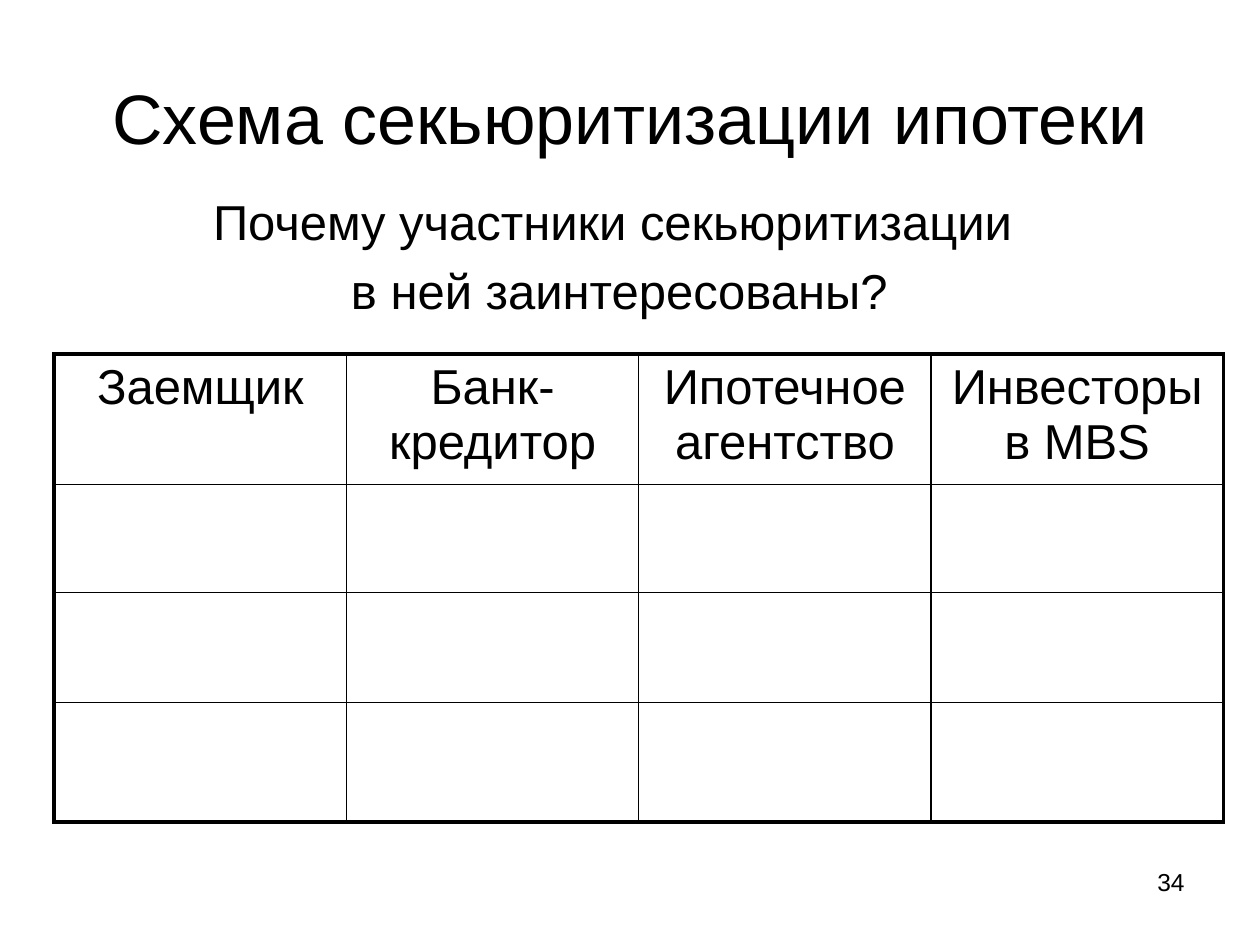
from lxml.etree import SubElement
from pptx import Presentation
from pptx.dml.color import RGBColor
from pptx.enum.text import MSO_ANCHOR as Anchor, PP_ALIGN as Align
from pptx.oxml import parse_xml
from pptx.oxml.ns import nsdecls, qn
from pptx.util import Inches, Pt

BLACK = RGBColor(0, 0, 0)
WHITE = RGBColor(255, 255, 255)
OUTER, INNER = Pt(2.25), Pt(1)
HEADERS = ["Заемщик", "Банк-кредитор", "Ипотечное агентство", "Инвесторы в MBS"]
ROW_HEIGHTS = [1.03, 0.86, 0.87, 0.95]
COLUMN_WIDTH = 2.32


def write(paragraph, text, size, align=Align.CENTER, before=0):
    paragraph.alignment = align
    paragraph.space_before = Pt(before)
    run = paragraph.add_run()
    run.text = text
    run.font.name = "Arial"
    run.font.size = Pt(size)
    run.font.color.rgb = BLACK


def add_box(left, top, width, height, anchor=Anchor.TOP):
    """Add a wrapping text box and return its text frame."""
    box = slide.shapes.add_textbox(*map(Inches, (left, top, width, height)))
    box.text_frame.word_wrap = True
    box.text_frame.vertical_anchor = anchor
    return box.text_frame


presentation = Presentation()
presentation.slide_width, presentation.slide_height = Inches(10), Inches(7.5)
slide = presentation.slides.add_slide(presentation.slide_layouts[6])
slide.background.fill.solid()
slide.background.fill.fore_color.rgb = WHITE

# Page number, title and question
write(add_box(7.17, 6.83, 2.33, 0.52).paragraphs[0], "34", 14, Align.RIGHT)
title = add_box(0.5, 0.3, 9, 1.25, Anchor.MIDDLE)
write(title.paragraphs[0], "Схема секьюритизации ипотеки", 40)

question = add_box(0.5, 1.47, 8.83, 1.1)
lines = ["Почему участники секьюритизации ", "в ней заинтересованы?"]
for paragraph, line in zip([question.paragraphs[0], question.add_paragraph()], lines):
    write(paragraph, line, 28, before=5.6)
    properties = paragraph._p.get_or_add_pPr()
    properties.set("marL", str(Inches(0.38)))
    properties.set("indent", str(-Inches(0.38)))

# Table of participants
row_count, column_count = len(ROW_HEIGHTS), len(HEADERS)
table = slide.shapes.add_table(
    row_count, column_count, Inches(0.43), Inches(2.81),
    Inches(COLUMN_WIDTH * column_count), Inches(sum(ROW_HEIGHTS))).table
table.first_row = table.horz_banding = False
for column in table.columns:
    column.width = Inches(COLUMN_WIDTH)
for row, height in zip(table.rows, ROW_HEIGHTS):
    row.height = Inches(height)
for column, header in enumerate(HEADERS):
    write(table.cell(0, column).text_frame.paragraphs[0], header, 28, before=5.6)

for row in range(row_count):
    for column in range(column_count):
        cell = table.cell(row, column)
        cell.fill.background()
        on_edge = {"lnL": column == 0, "lnR": column == column_count - 1,
                   "lnT": row == 0, "lnB": row == row_count - 1}
        for position, (side, outer) in enumerate(on_edge.items()):
            border = parse_xml(f'<a:{side} {nsdecls("a")} w="{OUTER if outer else INNER}"/>')
            fill = SubElement(border, qn("a:solidFill"))
            SubElement(fill, qn("a:srgbClr"), val=str(BLACK))
            cell._tc.get_or_add_tcPr().insert(position, border)

presentation.save("out.pptx")
